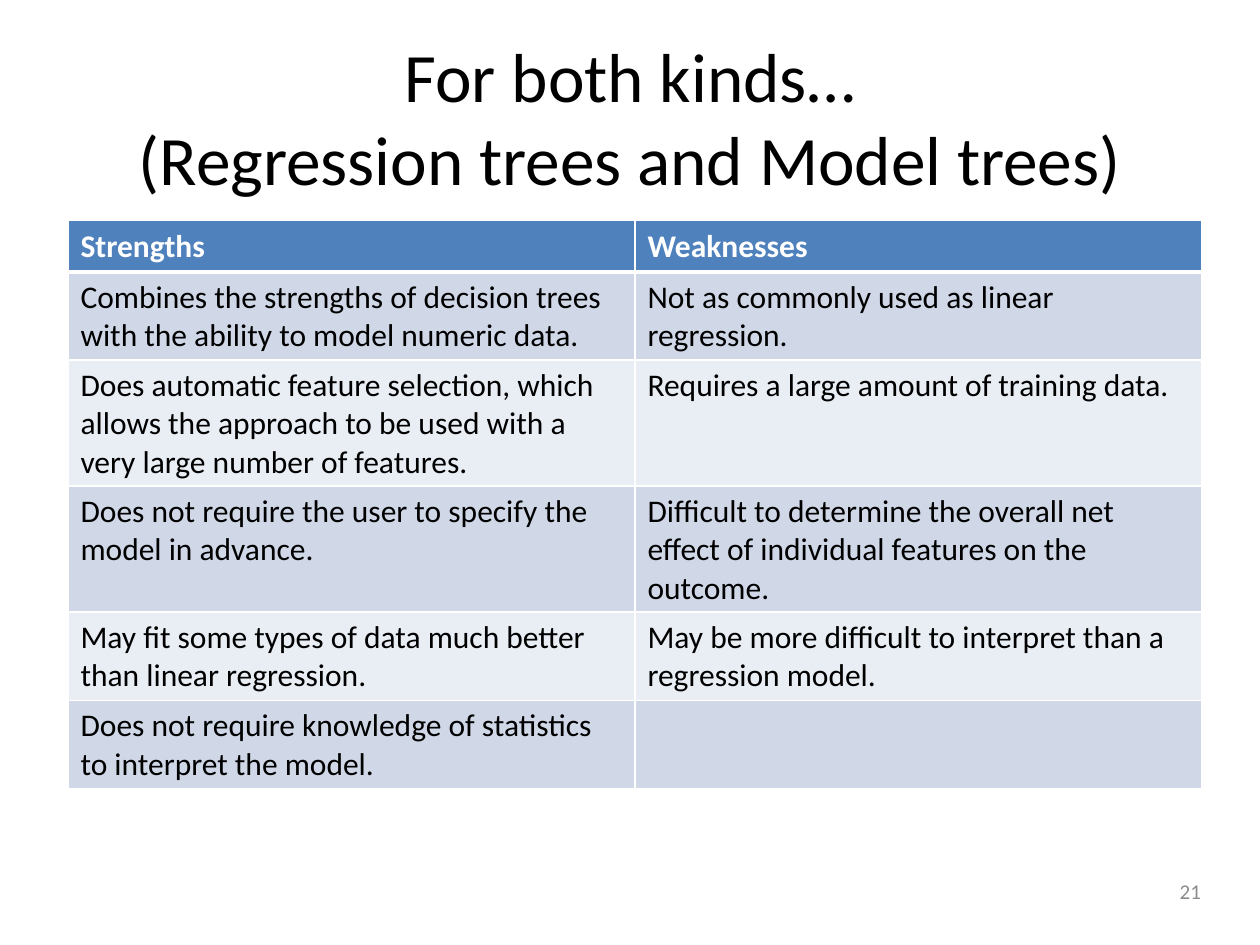
from typing import NamedTuple

from lxml.etree import SubElement
from pptx import Presentation
from pptx.dml.color import RGBColor
from pptx.enum.text import MSO_ANCHOR as Anchor, MSO_AUTO_SIZE as AutoSize, PP_ALIGN as Align
from pptx.oxml.ns import qn
from pptx.util import Cm, Pt

FONT = "Calibri"
WHITE, BLACK, GREY = "FFFFFF", "000000", "8C8C8C"
HEADER_FILL = "4F81BD"
BAND_FILLS = ("D0D8E8", "E9EDF4")
ROW_HEIGHT = Cm(1.03)


class Comparison(NamedTuple):
    strength: str
    weakness: str


class CellStyle(NamedTuple):
    fill: str
    color: str
    bold: bool
    top: float
    bottom: float


HEADINGS = Comparison("Strengths", "Weaknesses")
COMPARISONS = [
    Comparison(
        "Combines the strengths of decision trees with the ability to model numeric data.",
        "Not as commonly used as linear regression.",
    ),
    Comparison(
        "Does automatic feature selection, which allows the approach to be used "
        "with a very large number of features.",
        "Requires a large amount of training data.",
    ),
    Comparison(
        "Does not require the user to specify the model in advance.",
        "Difficult to determine the overall net effect of individual features on the outcome.",
    ),
    Comparison(
        "May fit some types of data much better than linear regression.",
        "May be more difficult to interpret than a regression model.",
    ),
    Comparison("Does not require knowledge of statistics to interpret the model.", ""),
]


def rgb(value: str) -> RGBColor:
    return RGBColor.from_string(value)


def add_run(paragraph, text: str, size: float, color: str, bold: bool = False) -> None:
    run = paragraph.add_run()
    run.text = text
    run.font.name = FONT
    run.font.size = Pt(size)
    run.font.bold = bold
    run.font.color.rgb = rgb(color)


def add_borders(cell, top: float, bottom: float) -> None:
    properties = cell._tc.get_or_add_tcPr()
    for side, width in (("lnL", 1), ("lnR", 1), ("lnT", top), ("lnB", bottom)):
        border = SubElement(properties, qn(f"a:{side}"), w=str(Pt(width)))
        paint = SubElement(border, qn("a:solidFill"))
        SubElement(paint, qn("a:srgbClr"), val=WHITE)


def fill_cell(cell, text: str, style: CellStyle) -> None:
    add_borders(cell, style.top, style.bottom)
    cell.fill.solid()
    cell.fill.fore_color.rgb = rgb(style.fill)
    paragraph = cell.text_frame.paragraphs[0]
    paragraph.font.size = Pt(18)
    if text:
        add_run(paragraph, text, 18, style.color, style.bold)


def row_style(index: int) -> CellStyle:
    if index == 0:
        return CellStyle(HEADER_FILL, WHITE, True, 1, 3)
    return CellStyle(BAND_FILLS[(index - 1) % 2], BLACK, False, 3 if index == 1 else 1, 1)


def add_title(slide) -> None:
    title = slide.shapes.title
    title.left, title.top, title.width, title.height = Cm(1.27), Cm(0.76), Cm(22.86), Cm(3.18)
    frame = title.text_frame
    frame.auto_size = AutoSize.NONE
    frame.vertical_anchor = Anchor.MIDDLE
    heading = frame.paragraphs[0]
    heading.alignment = Align.CENTER
    add_run(heading, "For both kinds…", 39.6, BLACK)
    heading.add_line_break()
    add_run(heading, "(Regression trees and Model trees)", 39.6, BLACK)


def add_comparison_table(slide) -> None:
    rows = [HEADINGS, *COMPARISONS]
    holder = slide.shapes.add_table(
        len(rows), len(HEADINGS), Cm(1.37), Cm(4.45), Cm(22.86), ROW_HEIGHT * len(rows)
    )
    for index, (comparison, row) in enumerate(zip(rows, holder.table.rows)):
        row.height = ROW_HEIGHT
        for cell, text in zip(row.cells, comparison):
            fill_cell(cell, text, row_style(index))
    holder.height = Cm(11.46)


def add_page_number(slide) -> None:
    frame = slide.shapes.add_textbox(Cm(18.54), Cm(17.45), Cm(5.92), Cm(1.02)).text_frame
    frame.word_wrap = True
    frame.vertical_anchor = Anchor.MIDDLE
    number = frame.paragraphs[0]
    number.alignment = Align.RIGHT
    add_run(number, "21", 12, GREY)


def main() -> None:
    deck = Presentation()
    deck.slide_width, deck.slide_height = Cm(25.4), Cm(19.05)
    slide = deck.slides.add_slide(deck.slide_layouts.get_by_name("Title Only"))
    add_page_number(slide)
    add_title(slide)
    add_comparison_table(slide)
    deck.save("out.pptx")


if __name__ == "__main__":
    main()
